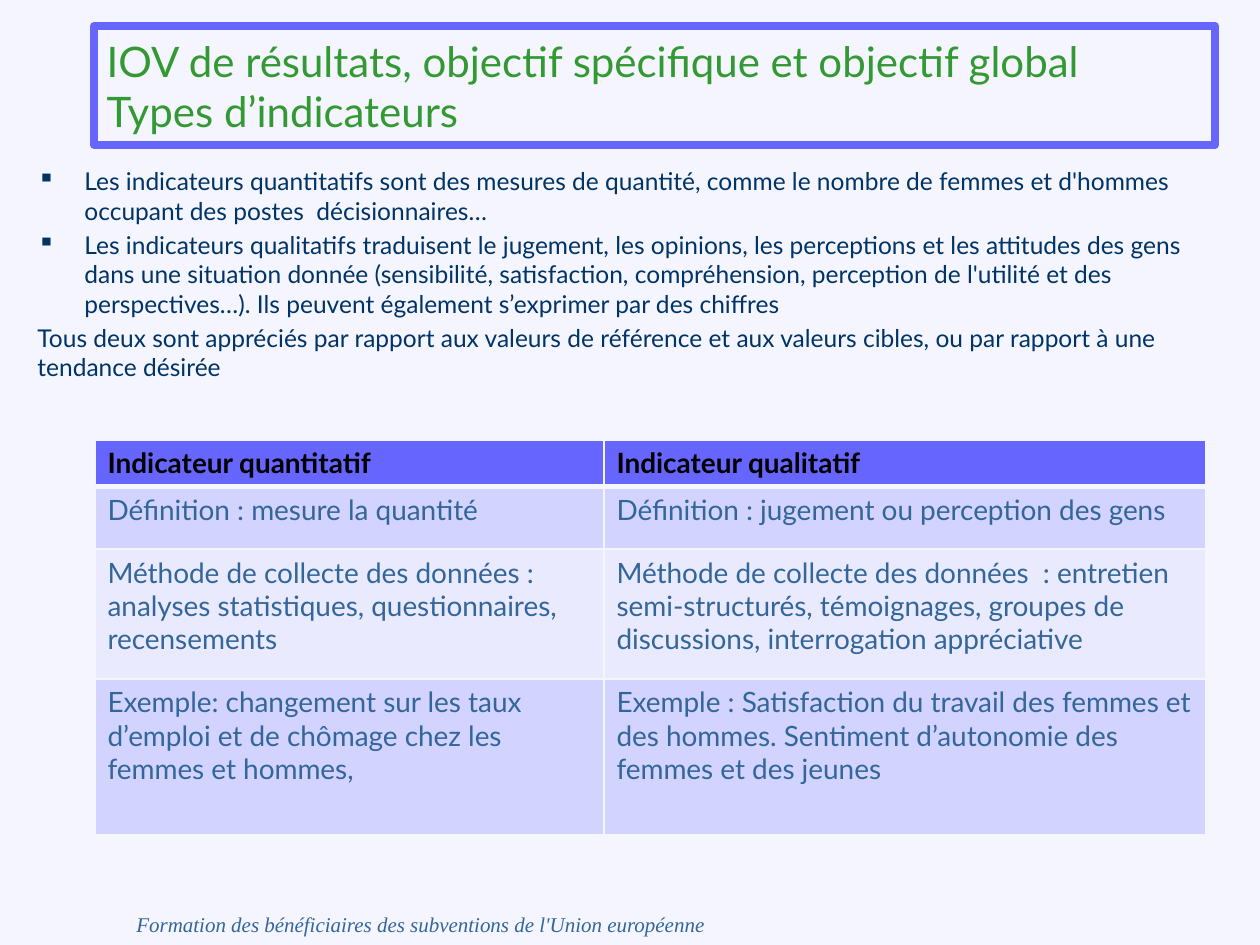
from lxml.etree import SubElement
from pptx import Presentation
from pptx.dml.color import RGBColor
from pptx.enum.text import MSO_ANCHOR as Anchor, MSO_AUTO_SIZE as AutoSize, PP_ALIGN as Align
from pptx.oxml.ns import qn
from pptx.util import Emu, Pt

SCALE = 914400 // 126
BACKGROUND = RGBColor(0xF4, 0xF5, 0xFE)
VIOLET = RGBColor(0x66, 0x66, 0xFF)
LILAC = RGBColor(0xD3, 0xD3, 0xFF)
PALE = RGBColor(0xEA, 0xEA, 0xFF)
GREEN = RGBColor(0x33, 0x99, 0x33)
NAVY = RGBColor(0x00, 0x33, 0x66)
STEEL = RGBColor(0x33, 0x66, 0x99)
BLACK = RGBColor(0, 0, 0)

TITLE = "IOV de résultats, objectif spécifique et objectif global\vTypes d’indicateurs"
BULLETS = [
    "Les indicateurs quantitatifs sont des mesures de quantité, comme le nombre de femmes et d'hommes occupant des postes  décisionnaires…",
    "Les indicateurs qualitatifs traduisent le jugement, les opinions, les perceptions et les attitudes des gens dans une situation donnée (sensibilité, satisfaction, compréhension, perception de l'utilité et des perspectives…). Ils peuvent également s’exprimer par des chiffres",
]
CONCLUSION = "Tous deux sont appréciés par rapport aux valeurs de référence et aux valeurs cibles, ou par rapport à une tendance désirée"
INDICATORS = [
    ("Indicateur quantitatif", "Indicateur qualitatif"),
    ("Définition : mesure la quantité", "Définition : jugement ou perception des gens"),
    ("Méthode de collecte des données : analyses statistiques, questionnaires, recensements",
     "Méthode de collecte des données  : entretien semi-structurés, témoignages, groupes de discussions, interrogation appréciative"),
    ("Exemple: changement sur les taux d’emploi et de chômage chez les femmes et hommes,",
     "Exemple : Satisfaction du travail des femmes et des hommes. Sentiment d’autonomie des femmes et des jeunes"),
]
FOOTER = "Formation des bénéficiaires des subventions de l'Union européenne"


def px(length):
    return Emu(length * SCALE)


def apply(target, values):
    for name, value in values.items():
        setattr(target, name, value)


class PageBuilder:
    def __init__(self, deck, font="Lato"):
        self.font = font
        self.page = deck.slides.add_slide(deck.slide_layouts[5])
        fill = self.page.background.fill
        fill.solid()
        fill.fore_color.rgb = BACKGROUND

    def set_text(self, para, text, size, color, **style):
        para.text = text
        para.alignment = Align.LEFT
        apply(para.font, {"name": self.font, "size": Pt(size), "bold": False, **style})
        para.font.color.rgb = color

    def title(self, text, left, top, width, height):
        box = self.page.shapes.title
        apply(box, {"left": px(left), "top": px(top), "width": px(width), "height": px(height)})
        box.line.color.rgb = VIOLET
        box.line.width = Pt(4.5)
        apply(box.text_frame, {"word_wrap": True, "auto_size": AutoSize.NONE,
                               "vertical_anchor": Anchor.MIDDLE})
        self.set_text(box.text_frame.paragraphs[0], text, 24, GREEN)

    def text_box(self, left, top, width, height):
        box = self.page.shapes.add_textbox(px(left), px(top), px(width), px(height))
        box.text_frame.word_wrap = True
        return box.text_frame

    def body(self, bullets, conclusion, *place):
        frame = self.text_box(*place)
        for index, text in enumerate([*bullets, conclusion]):
            para = frame.paragraphs[0] if index == 0 else frame.add_paragraph()
            if index:
                para.space_before = Pt(2.8)
            if index < len(bullets):
                self.bullet(para, 47)
            self.set_text(para, text, 14, NAVY)

    def bullet(self, para, indent):
        properties = para._p.get_or_add_pPr()
        properties.set("marL", str(px(indent)))
        properties.set("indent", str(-px(indent)))
        SubElement(properties, qn("a:buChar"), char="▪")

    def borders(self, cell, widths):
        properties = cell._tc.get_or_add_tcPr()
        for side, width in widths.items():
            line = SubElement(properties, qn(f"a:ln{side}"), w=str(Pt(width)))
            SubElement(SubElement(line, qn("a:solidFill")), qn("a:srgbClr"), val=str(BACKGROUND))

    def table(self, rows, left, top, widths, heights):
        shape = self.page.shapes.add_table(len(rows), len(widths), px(left), px(top),
                                           px(sum(widths)), px(sum(heights)))
        grid = shape.table
        for column, width in zip(grid.columns, widths):
            column.width = px(width)
        for index, (row, height, texts) in enumerate(zip(grid.rows, heights, rows)):
            row.height = px(height)
            header = index == 0
            color = VIOLET if header else LILAC if index % 2 else PALE
            edges = {"L": 1, "R": 1, "T": 3 if index == 1 else 1, "B": 3 if header else 1}
            for cell, text in zip(row.cells, texts):
                self.borders(cell, edges)
                cell.fill.solid()
                cell.fill.fore_color.rgb = color
                self.set_text(cell.text_frame.paragraphs[0], text, 16,
                              BLACK if header else STEEL, bold=header)

    def footer(self, text, *place):
        para = self.text_box(*place).paragraphs[0]
        self.set_text(para, text, 12, STEEL, name="Times New Roman", italic=True)


def main():
    deck = Presentation()
    apply(deck, {"slide_width": px(1260), "slide_height": px(945)})
    builder = PageBuilder(deck)
    builder.title(TITLE, 94, 26, 1121, 119)
    builder.body(BULLETS, CONCLUSION, 25, 160, 1191, 280)
    builder.table(INDICATORS, 95, 440, [509, 602], [45, 63, 130, 156])
    builder.footer(FOOTER, 124, 905, 735, 40)
    deck.save("out.pptx")


if __name__ == "__main__":
    main()
